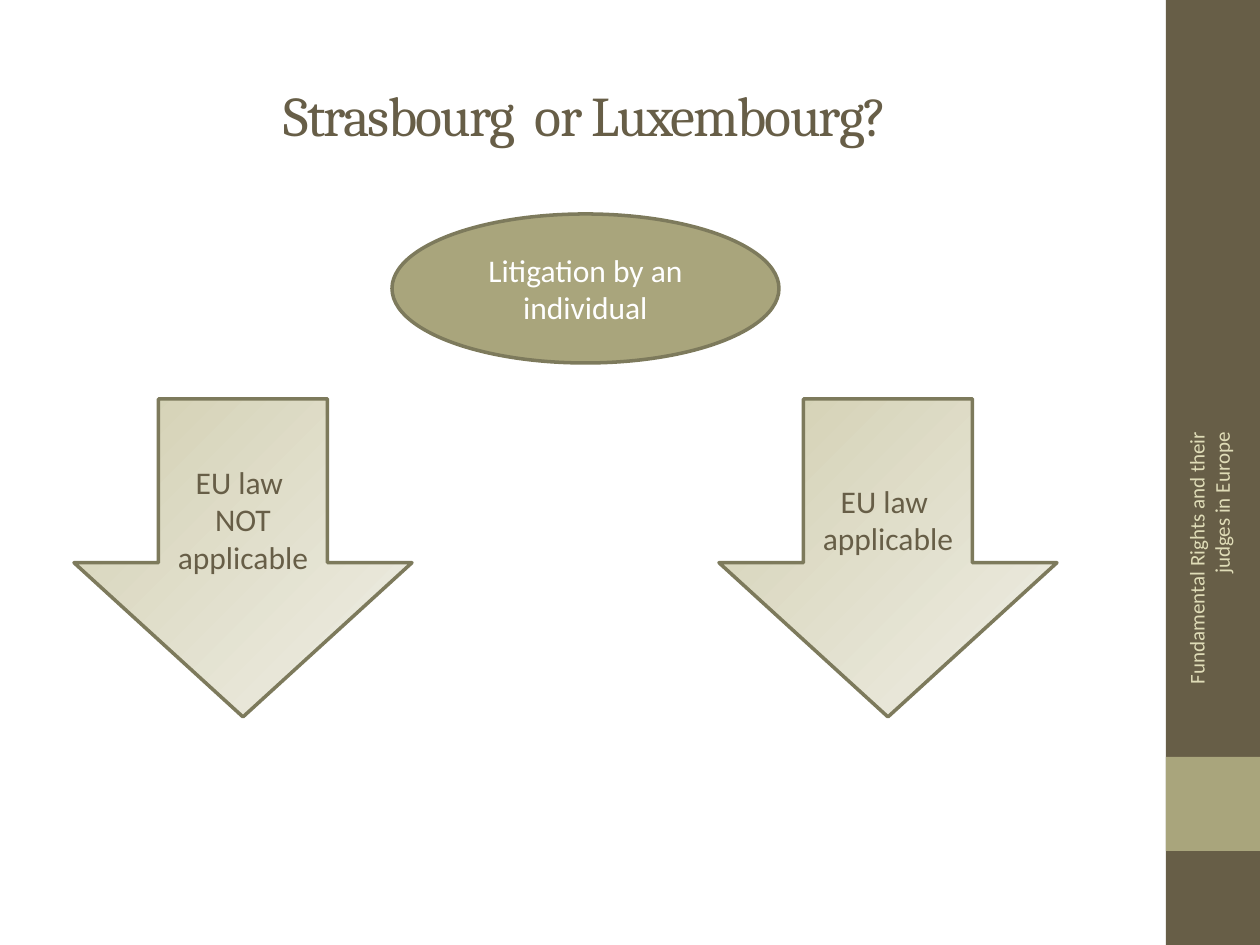
from pptx import Presentation
from pptx.dml.color import RGBColor
from pptx.enum.shapes import MSO_SHAPE as SHAPE
from pptx.enum.text import MSO_ANCHOR as ANCHOR, PP_ALIGN as ALIGN
from pptx.util import Emu, Pt

BROWN = RGBColor(0x67, 0x5E, 0x47)
OLIVE = RGBColor(0xA9, 0xA5, 0x7C)
OUTLINE = RGBColor(0x7D, 0x7A, 0x5C)
SAND = RGBColor(0xD2, 0xCF, 0xB1)
IVORY = RGBColor(0xF0, 0xEF, 0xE7)
CREAM = RGBColor(0xDF, 0xDC, 0xB7)
WHITE = RGBColor(0xFF, 0xFF, 0xFF)


def px(n):
    """Convert px to EMU at 126 px to the inch."""
    return Emu(round(n * 914400 / 126))


def write(sp, lines, size, color, align=ALIGN.CENTER, font="Calibri"):
    """Fill a shape with one paragraph per line, centred vertically."""
    tf = sp.text_frame
    tf.word_wrap = True
    tf.vertical_anchor = ANCHOR.MIDDLE
    for i, line in enumerate(lines):
        p = tf.add_paragraph() if i else tf.paragraphs[0]
        p.text = line
        p.alignment = align
        p.font.name = font
        p.font.size = Pt(size)
        p.font.color.rgb = color


def add_shape(slide, kind, x, y, w, h, fill=None, line=None):
    """Add a flat preset shape with an optional solid fill and outline."""
    sp = slide.shapes.add_shape(kind, px(x), px(y), px(w), px(h))
    sp.shadow.inherit = False
    if fill is not None:
        sp.fill.solid()
        sp.fill.fore_color.rgb = fill
    if line is None:
        sp.line.fill.background()
    else:
        sp.line.color.rgb = line
        sp.line.width = Pt(2)
    return sp


def add_sidebar(slide, x, y, w, h, footer):
    """Draw the side bar with its accent square and upright footer."""
    add_shape(slide, SHAPE.RECTANGLE, x, y, w, h, BROWN)
    add_shape(slide, SHAPE.RECTANGLE, x, y + h - 2 * w, w, w, OLIVE)
    length, depth = 326, 50
    left = x + (w - length) / 2 - 4
    sp = slide.shapes.add_textbox(px(left), px(y + 558), px(length), px(depth))
    sp.rotation = 270
    write(sp, [footer], 12, CREAM, ALIGN.RIGHT)


def add_title(slide, x, y, w, h, text):
    """Place the tightly spaced serif title."""
    sp = slide.shapes.add_textbox(px(x), px(y), px(w), px(h))
    write(sp, [text], 32, BROWN, font="Cambria")
    r = sp.text_frame.paragraphs[0].runs[0]
    r.font._element.set("spc", "-100")


def add_arrow(slide, x, y, w, h, lines):
    """Draw a gradient down arrow with its label."""
    sp = add_shape(slide, SHAPE.DOWN_ARROW, x, y, w, h, line=OUTLINE)
    sp.adjustments[0] = 0.5
    sp.adjustments[1] = 0.485
    sp.fill.gradient()
    sp.fill.gradient_angle = 315
    for stop, color in zip(sp.fill.gradient_stops, (SAND, IVORY)):
        stop.color.rgb = color
    write(sp, lines, 18, BROWN)


def add_diagram(slide, x, y, w, h):
    """Draw the litigation ellipse above its two outcome arrows."""
    sp = add_shape(slide, SHAPE.OVAL, x + 318, y, 387, 149, OLIVE, OUTLINE)
    write(sp, ["Litigation by an individual"], 18, WHITE)
    arrow_w, arrow_h = 338, 318
    top = y + h - arrow_h
    add_arrow(slide, x, top, arrow_w, arrow_h, ["EU law ", "NOT applicable"])
    add_arrow(slide, x + w - arrow_w, top, arrow_w, arrow_h,
              ["EU law ", "applicable"])


def main():
    """Build and save the slide."""
    prs = Presentation()
    prs.slide_width, prs.slide_height = px(1260), px(945)
    slide = prs.slides.add_slide(prs.slide_layouts[6])
    add_sidebar(slide, 1166, 0, 94, 945,
                "Fundamental Rights and their judges in Europe")
    add_title(slide, 60, 35, 1050, 158, "Strasbourg  or Luxembourg?")
    add_diagram(slide, 74, 214, 983, 503)
    prs.save("out.pptx")


if __name__ == "__main__":
    main()
